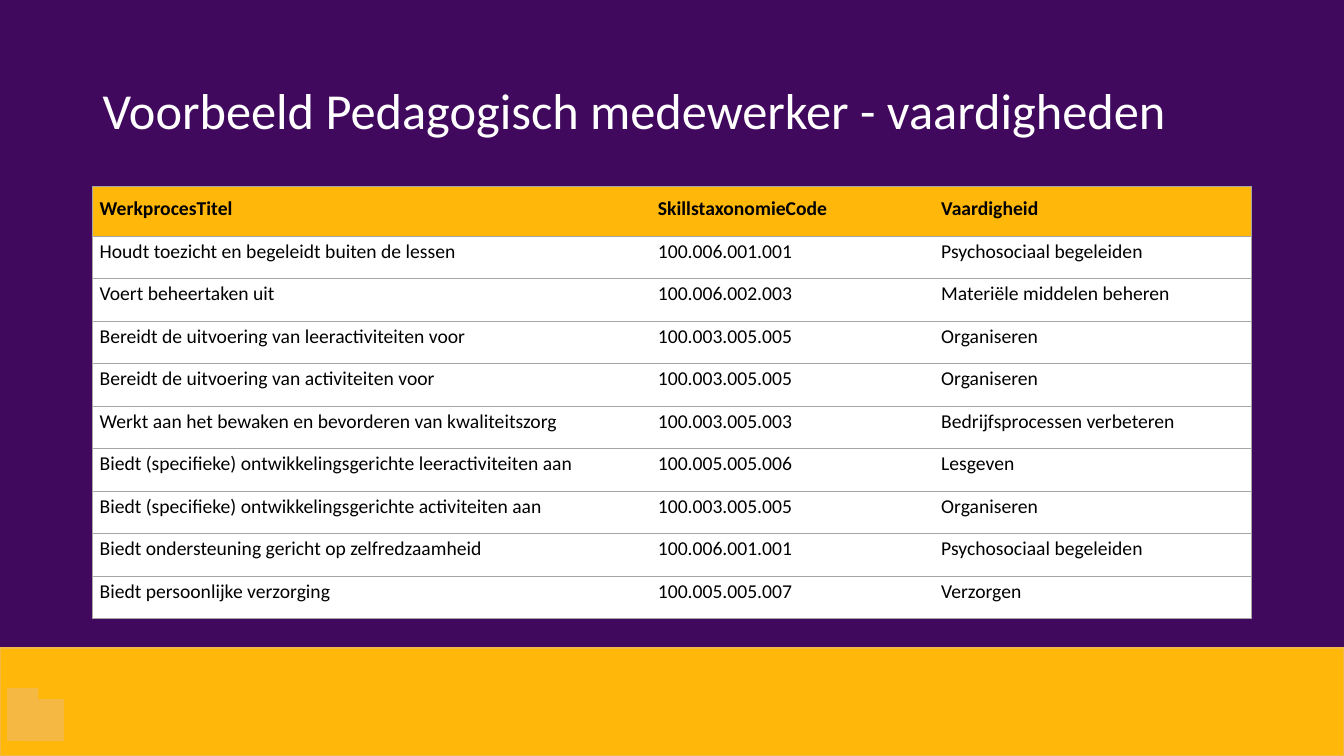
from lxml import etree
from pptx import Presentation
from pptx.dml.color import RGBColor
from pptx.enum.shapes import MSO_SHAPE
from pptx.enum.text import MSO_ANCHOR, MSO_AUTO_SIZE, PP_ALIGN
from pptx.oxml.ns import qn
from pptx.util import Cm, Pt

RECT = MSO_SHAPE.RECTANGLE
LEFT = PP_ALIGN.LEFT
MIDDLE, BOTTOM = MSO_ANCHOR.MIDDLE, MSO_ANCHOR.BOTTOM
FIXED = MSO_AUTO_SIZE.NONE
TITLE_ONLY = 5

COLORS = {
    "purple": "40095D",
    "gold": "FFB709",
    "sand": "F5B843",
    "grey": "A5A5A5",
    "white": "FFFFFF",
    "black": "000000",
}

TITLE = "Voorbeeld Pedagogisch medewerker - vaardigheden"
WIDTHS = [14.07, 7.14, 8]
HEAD_H, ROW_H = 1.26, 1.07
ROWS = [
    ("WerkprocesTitel", "SkillstaxonomieCode", "Vaardigheid"),
    ("Houdt toezicht en begeleidt buiten de lessen", "100.006.001.001", "Psychosociaal begeleiden"),
    ("Voert beheertaken uit", "100.006.002.003", "Materiële middelen beheren"),
    ("Bereidt de uitvoering van leeractiviteiten voor", "100.003.005.005", "Organiseren"),
    ("Bereidt de uitvoering van activiteiten voor", "100.003.005.005", "Organiseren"),
    ("Werkt aan het bewaken en bevorderen van kwaliteitszorg", "100.003.005.003",
     "Bedrijfsprocessen verbeteren"),
    ("Biedt (specifieke) ontwikkelingsgerichte leeractiviteiten aan", "100.005.005.006", "Lesgeven"),
    ("Biedt (specifieke) ontwikkelingsgerichte activiteiten aan", "100.003.005.005", "Organiseren"),
    ("Biedt ondersteuning gericht op zelfredzaamheid", "100.006.001.001", "Psychosociaal begeleiden"),
    ("Biedt persoonlijke verzorging", "100.005.005.007", "Verzorgen"),
]


def tint(name):
    return RGBColor.from_string(COLORS[name])


def write(frame, text, size=14, color="black", bold=False, space=1.0):
    para = frame.paragraphs[0]
    para.alignment = LEFT
    para.line_spacing = space
    run = para.add_run()
    run.text = text
    font = run.font
    font.name = "Calibri"
    font.size = Pt(size)
    font.bold = bold
    font.color.rgb = tint(color)


def edge(cell, side, color=None):
    """Draw one cell border, or clear it when no color is given."""
    props = cell._tc.get_or_add_tcPr()
    line = etree.SubElement(props, qn(f"a:ln{side}"), w=str(Pt(0.5)))
    if color:
        fill = etree.SubElement(line, qn("a:solidFill"))
        etree.SubElement(fill, qn("a:srgbClr"), val=COLORS[color])
    else:
        etree.SubElement(line, qn("a:noFill"))


class Deck:
    """Holds the slide in hand and its look."""

    def __init__(self, prs):
        self.slide = prs.slides.add_slide(prs.slide_layouts[TITLE_ONLY])
        back = self.slide.background.fill
        back.solid()
        back.fore_color.rgb = tint("purple")

    def block(self, left, top, width, height, fill, line=None):
        box = self.slide.shapes.add_shape(RECT, Cm(left), Cm(top), Cm(width), Cm(height))
        box.shadow.inherit = False
        box.fill.solid()
        box.fill.fore_color.rgb = tint(fill)
        if line:
            box.line.color.rgb = tint(line)
            box.line.width = Pt(1)
        else:
            box.line.fill.background()

    def title(self, text, left, top, width, height):
        box = self.slide.shapes.title
        box.left, box.top, box.width, box.height = Cm(left), Cm(top), Cm(width), Cm(height)
        frame = box.text_frame
        frame.word_wrap = True
        frame.auto_size = FIXED
        frame.vertical_anchor = MIDDLE
        write(frame, text, size=36, color="white", space=0.9)

    def table(self, rows, left, top):
        high = HEAD_H + ROW_H * (len(rows) - 1)
        grid = self.slide.shapes.add_table(
            len(rows), len(WIDTHS), Cm(left), Cm(top), Cm(sum(WIDTHS)), Cm(high)).table
        for col, width in zip(grid.columns, WIDTHS):
            col.width = Cm(width)
        for r, row in enumerate(rows):
            grid.rows[r].height = Cm(ROW_H if r else HEAD_H)
            for c, text in enumerate(row):
                self.cell(grid.cell(r, c), text, r == 0, c)

    def cell(self, cell, text, head, col):
        cell.margin_left, cell.margin_right = Cm(0.18), Cm(0.03)
        cell.margin_top, cell.margin_bottom = Cm(0.05), Cm(0.38)
        cell.vertical_anchor = BOTTOM
        edge(cell, "L", "grey" if col == 0 else None)
        edge(cell, "R", "grey" if col == len(WIDTHS) - 1 else None)
        edge(cell, "T", "grey")
        edge(cell, "B", "grey")
        cell.fill.solid()
        cell.fill.fore_color.rgb = tint("gold" if head else "white")
        write(cell.text_frame, text, bold=head)


def main():
    prs = Presentation()
    prs.slide_width, prs.slide_height = Cm(33.87), Cm(19.05)
    deck = Deck(prs)
    deck.block(0, 16.33, 33.87, 2.72, "gold", line="sand")
    deck.block(0.18, 17.34, 0.79, 1.33, "sand")
    deck.block(0.61, 17.62, 1, 1.06, "sand")
    deck.title(TITLE, 2.33, 1.01, 29.21, 3.68)
    deck.table(ROWS, 2.33, 4.69)
    prs.save("out.pptx")


if __name__ == "__main__":
    main()
